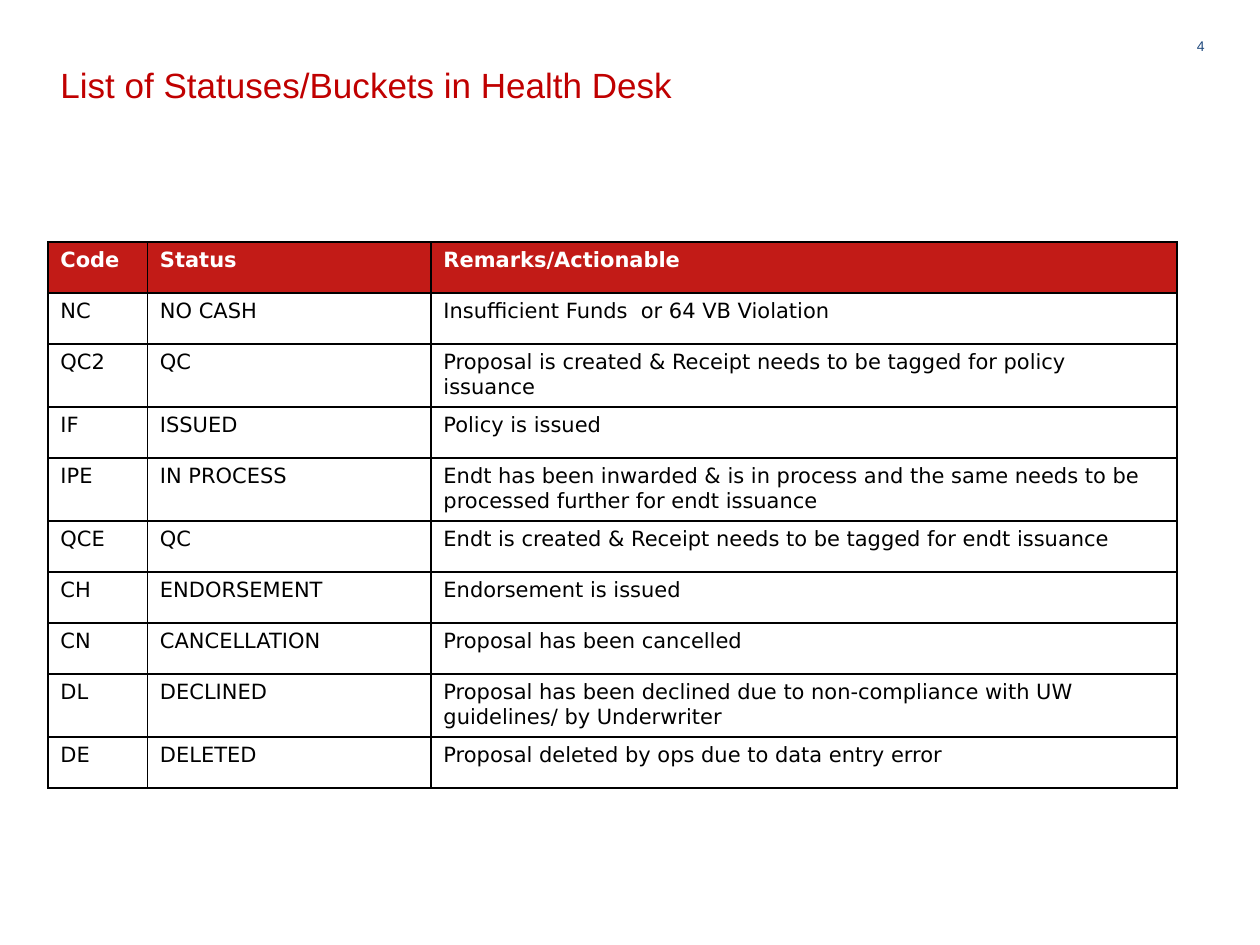
from dataclasses import dataclass

from lxml.etree import SubElement
from pptx import Presentation
from pptx.dml.color import RGBColor
from pptx.enum.text import MSO_ANCHOR, PP_ALIGN
from pptx.oxml.ns import qn
from pptx.util import Inches, Pt

RED, HEADER_RED, NAVY = "C00000", "C21B17", "1F497D"
BLACK, WHITE = "000000", "FFFFFF"
COLUMN_WIDTHS = (0.79, 2.25, 5.92)
ROW_COUNT = 10
ROW_HEIGHT = Inches(4.05) // ROW_COUNT


@dataclass
class StatusRow:
    code: str
    status: str
    remarks: str


HEADER = StatusRow("Code", "Status", "Remarks/Actionable")
STATUSES = [
    StatusRow("NC", "NO CASH", "Insufficient Funds  or 64 VB Violation"),
    StatusRow("QC2", "QC", "Proposal is created & Receipt needs to be tagged for policy issuance"),
    StatusRow("IF", "ISSUED", "Policy is issued"),
    StatusRow("IPE", "IN PROCESS", "Endt has been inwarded & is in process and the same "
              "needs to be processed further for endt issuance"),
    StatusRow("QCE", "QC", "Endt is created & Receipt needs to be tagged for endt issuance"),
    StatusRow("CH", "ENDORSEMENT", "Endorsement is issued"),
    StatusRow("CN", "CANCELLATION", "Proposal has been cancelled"),
    StatusRow("DL", "DECLINED", "Proposal has been declined due to non-compliance "
              "with UW guidelines/ by Underwriter"),
    StatusRow("DE", "DELETED", "Proposal deleted by ops due to data entry error"),
]


def color(value: str) -> RGBColor:
    return RGBColor.from_string(value)


def set_attributes(target, values: dict) -> None:
    for name, value in values.items():
        setattr(target, name, value)


def write_text(frame, text: str, font_color: str, font: dict, paragraph_format: dict) -> None:
    paragraph = frame.paragraphs[0]
    paragraph.text = text
    set_attributes(paragraph, paragraph_format)
    set_attributes(paragraph.font, font)
    paragraph.font.color.rgb = color(font_color)


def add_borders(cell) -> None:
    properties = cell._tc.get_or_add_tcPr()
    for position, side in enumerate(("lnL", "lnR", "lnT", "lnB")):
        line = SubElement(properties, qn(f"a:{side}"), w=str(Pt(1)))
        fill = SubElement(line, qn("a:solidFill"))
        SubElement(fill, qn("a:srgbClr"), val=BLACK)
        # Borders come before the cell fill in the schema
        properties.insert(position, line)


def fill_row(table, index: int, row: StatusRow) -> None:
    is_header = row is HEADER
    font = {"name": "DejaVu Sans", "size": Pt(12), "bold": is_header}
    for column, text in enumerate((row.code, row.status, row.remarks)):
        cell = table.cell(index, column)
        cell.fill.solid()
        cell.fill.fore_color.rgb = color(HEADER_RED if is_header else WHITE)
        write_text(cell.text_frame, text, WHITE if is_header else BLACK, font, {})
        add_borders(cell)


def add_title(slide) -> None:
    title = slide.shapes.title
    set_attributes(title, {"left": Inches(0.38), "top": Inches(0.48),
                           "width": Inches(9.17), "height": Inches(0.57)})
    title.text_frame.vertical_anchor = MSO_ANCHOR.TOP
    write_text(title.text_frame, "List of Statuses/Buckets in Health Desk", RED,
               {"name": "Arial", "size": Pt(20)},
               {"alignment": PP_ALIGN.LEFT, "line_spacing": Pt(22)})


def add_page_number(slide) -> None:
    box = slide.shapes.add_textbox(Inches(9.34), Inches(0.3), Inches(0.22), Inches(0.2))
    margins = dict.fromkeys(("margin_left", "margin_top", "margin_right", "margin_bottom"), 0)
    set_attributes(box.text_frame, {"word_wrap": True, **margins})
    write_text(box.text_frame, "4", NAVY, {"name": "Arial", "size": Pt(8)},
               {"alignment": PP_ALIGN.RIGHT})


def add_status_table(slide) -> None:
    table = slide.shapes.add_table(
        ROW_COUNT, len(COLUMN_WIDTHS), Inches(0.38), Inches(1.92),
        Inches(sum(COLUMN_WIDTHS)), ROW_HEIGHT * ROW_COUNT).table
    table.horz_banding = False
    for column, width in zip(table.columns, COLUMN_WIDTHS):
        column.width = Inches(width)
    for index, row in enumerate([HEADER, *STATUSES]):
        fill_row(table, index, row)


def main() -> None:
    presentation = Presentation()
    presentation.slide_width, presentation.slide_height = Inches(10), Inches(7.5)
    slide = presentation.slides.add_slide(presentation.slide_layouts[5])
    add_title(slide)
    add_page_number(slide)
    add_status_table(slide)
    presentation.save("out.pptx")


if __name__ == "__main__":
    main()
